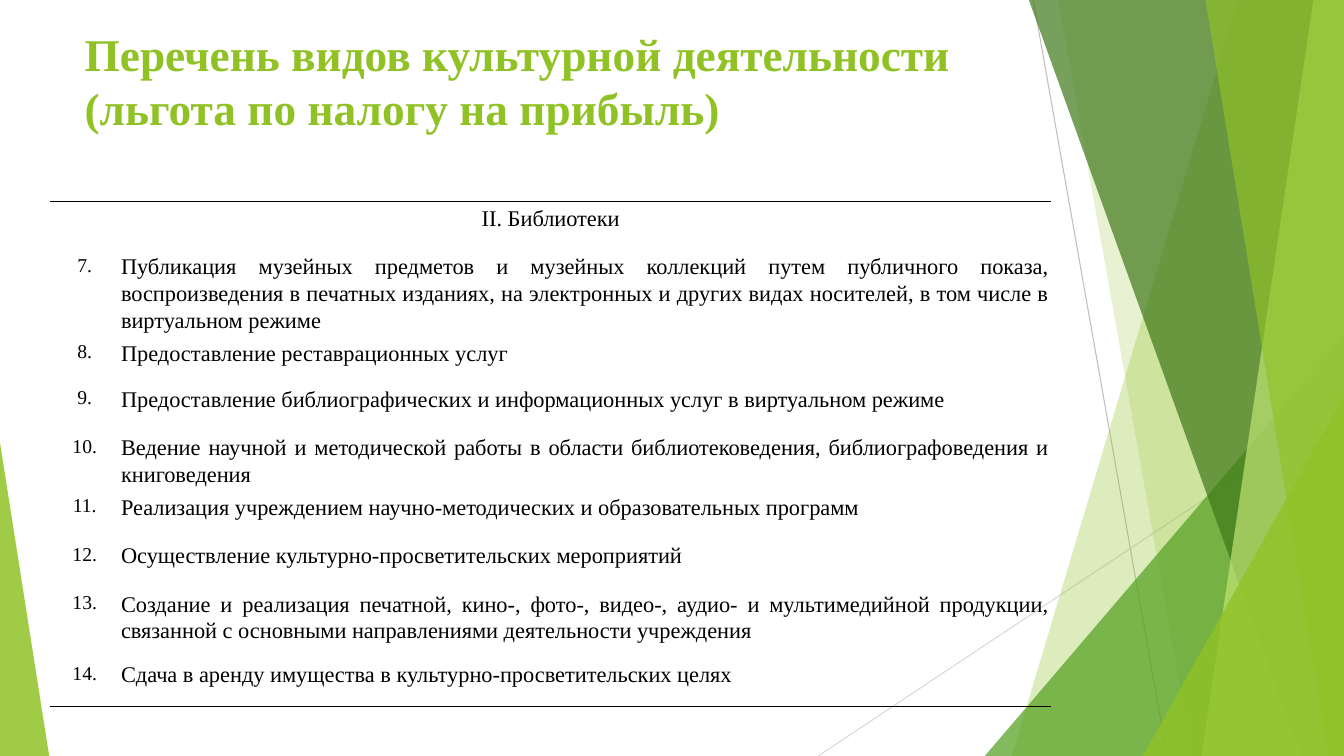
from collections import namedtuple

import lxml.etree
import pptx
import pptx.dml.color
import pptx.enum.shapes
import pptx.enum.text
import pptx.oxml.ns
import pptx.util

Cm = pptx.util.Cm
Pt = pptx.util.Pt
RGBColor = pptx.dml.color.RGBColor
Shape = pptx.enum.shapes.MSO_SHAPE
Align = pptx.enum.text.PP_ALIGN
qn = pptx.oxml.ns.qn

LIME = RGBColor(0x90, 0xC2, 0x26)
GREEN = RGBColor(0x54, 0xA0, 0x21)
FOREST = RGBColor(0x3F, 0x78, 0x19)
PALE_LIME = RGBColor(0xC0, 0xE4, 0x74)
GREY = RGBColor(0xBF, 0xBF, 0xBF)
LIGHT_GREY = RGBColor(0xD9, 0xD9, 0xD9)
BLACK = RGBColor(0, 0, 0)

FONT = "Times New Roman"
NO_STYLE = "{2D5ABB26-0587-4C30-8999-92F81FD0307C}"
Box = namedtuple("Box", "left top width height")

TITLE = "Перечень видов культурной деятельности (льгота по налогу на прибыль)"
HEADING = "II. Библиотеки"
FIRST_NUMBER = 7
ACTIVITIES = [
    "Публикация музейных предметов и музейных коллекций путем публичного показа, "
    "воспроизведения в печатных изданиях, на электронных и других видах носителей, "
    "в том числе в виртуальном режиме",
    "Предоставление реставрационных услуг",
    "Предоставление библиографических и информационных услуг в виртуальном режиме",
    "Ведение научной и методической работы в области библиотековедения, "
    "библиографоведения и книговедения",
    "Реализация учреждением научно-методических и образовательных программ",
    "Осуществление культурно-просветительских мероприятий",
    "Создание и реализация печатной, кино-, фото-, видео-, аудио- и мультимедийной "
    "продукции, связанной с основными направлениями деятельности учреждения",
    "Сдача в аренду имущества в культурно-просветительских целях",
]
ROW_HEIGHTS = [1.22, 2.16, 1.17, 1.22, 1.14, 1.22, 1.22, 1.78, 1.22]
NUMBER_WIDTH = 1.73


def paint(shape, color, opacity):
    shape.shadow.inherit = False
    shape.line.fill.background()
    shape.fill.solid()
    shape.fill.fore_color.rgb = color
    fill = shape.element.spPr.find(qn("a:solidFill"))
    lxml.etree.SubElement(fill[0], qn("a:alpha"), val=str(opacity * 1000))


def add_ray(page, start, end, color):
    ray = page.shapes.add_connector(
        pptx.enum.shapes.MSO_CONNECTOR.STRAIGHT, *map(Cm, start + end))
    ray.line.color.rgb = color
    ray.line.width = Pt(0.75)
    lxml.etree.SubElement(ray.element.spPr, qn("a:effectLst"))


def add_facet(page, box, top_offset, bottom_offset, color, opacity):
    right, bottom = box.left + box.width, box.top + box.height
    corners = [(right, box.top), (right, bottom), (box.left + bottom_offset, bottom)]
    builder = page.shapes.build_freeform(Cm(box.left + top_offset), Cm(box.top))
    builder.add_line_segments([(Cm(x), Cm(y)) for x, y in corners], close=True)
    paint(builder.convert_to_shape(), color, opacity)


def add_wedge(page, box, peak, color, opacity):
    wedge = page.shapes.add_shape(Shape.ISOSCELES_TRIANGLE, *map(Cm, box))
    wedge.adjustments[0] = peak
    paint(wedge, color, opacity)


def add_corner_wedge(page, box, left_offset, top_offset, color, opacity):
    corner = Box(box.left + left_offset, box.top + top_offset,
                 box.width - left_offset, box.height - top_offset)
    add_wedge(page, corner, 1, color, opacity)


def add_ornament(page, box):
    right, bottom = box.left + box.width, box.top + box.height
    add_ray(page, (box.left + 5.42, box.top), (box.left + 8.79, bottom), GREY)
    add_ray(page, (right, box.top + 10.24), (box.left, bottom), LIGHT_GREY)
    add_facet(page, box, 10.57, 4.88, LIME, 30)
    add_facet(page, box, 6.05, 9.43, LIME, 20)
    add_corner_wedge(page, box, 4.2, 8.46, GREEN, 72)
    add_facet(page, box, 5.31, 12.17, FOREST, 70)
    add_facet(page, box, 12.48, 9.66, PALE_LIME, 70)
    add_facet(page, box, 9.76, 12.86, LIME, 65)
    add_corner_wedge(page, box, 8.18, 9.98, LIME, 80)


def add_title(page, box):
    title = page.shapes.title
    title.left, title.top, title.width, title.height = map(Cm, box)
    frame = title.text_frame
    frame.text = TITLE
    frame.word_wrap = True
    frame.auto_size = pptx.enum.text.MSO_AUTO_SIZE.NONE
    frame.vertical_anchor = pptx.enum.text.MSO_ANCHOR.TOP
    para = frame.paragraphs[0]
    para.alignment = Align.LEFT
    para.font.name = FONT
    para.font.size = Pt(32.4)
    para.font.bold = True
    para.font.color.rgb = LIME


def write_cell(cell, text, size, alignment):
    cell.text = text
    cell.margin_left = cell.margin_right = Cm(0.05)
    cell.margin_top = cell.margin_bottom = Cm(0.08)
    para = cell.text_frame.paragraphs[0]
    para.alignment = alignment
    para.line_spacing = 1.07
    para.font.name = FONT
    para.font.size = Pt(size)
    para.font.color.rgb = BLACK


def add_border(cell, side):
    properties = cell._tc.get_or_add_tcPr()
    border = lxml.etree.Element(qn(f"a:{side}"), w=str(Pt(1)))
    fill = lxml.etree.SubElement(border, qn("a:solidFill"))
    lxml.etree.SubElement(fill, qn("a:srgbClr"), val=str(BLACK))
    properties.insert(0, border)


def add_activities(page, box):
    frame = page.shapes.add_table(len(ROW_HEIGHTS), 2, *map(Cm, box))
    frame.element.xpath(".//a:tableStyleId")[0].text = NO_STYLE
    table = frame.table
    table.first_row = table.horz_banding = False
    table.columns[0].width = Cm(NUMBER_WIDTH)
    table.columns[1].width = Cm(box.width - NUMBER_WIDTH)
    for row, height in zip(table.rows, ROW_HEIGHTS):
        row.height = Cm(height)
    for cell in table.iter_cells():
        cell.fill.background()

    table.cell(0, 0).merge(table.cell(0, 1))
    write_cell(table.cell(0, 0), HEADING, 16, Align.CENTER)
    for index, activity in enumerate(ACTIVITIES):
        number = f"{FIRST_NUMBER + index}."
        write_cell(table.cell(index + 1, 0), number, 14, Align.CENTER)
        write_cell(table.cell(index + 1, 1), activity, 16, Align.JUSTIFY)
    for column in range(2):
        add_border(table.cell(0, column), "lnT")
        add_border(table.cell(len(ACTIVITIES), column), "lnB")


def main():
    deck = pptx.Presentation()
    deck.slide_width, deck.slide_height = Cm(33.87), Cm(19.05)
    page = deck.slides.add_slide(deck.slide_layouts[5])
    add_ornament(page, Box(20.62, 0, 13.25, 19.05))
    add_wedge(page, Box(0, 11.15, 1.24, 7.9), 0, LIME, 85)
    add_title(page, Box(1.88, 0.53, 23.88, 2.9))
    add_activities(page, Box(1.27, 5.08, 25.22, sum(ROW_HEIGHTS)))
    deck.save("out.pptx")


if __name__ == "__main__":
    main()
